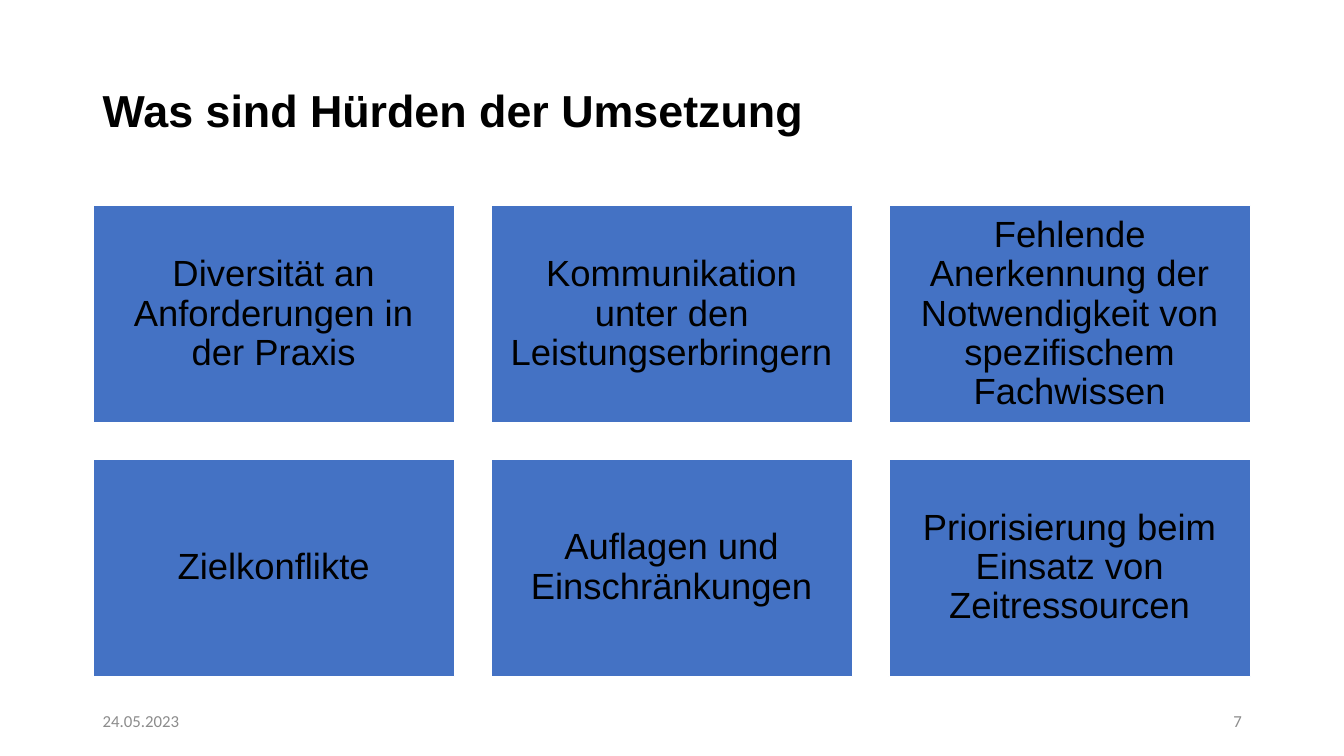
from pptx import Presentation
from pptx.dml.color import RGBColor
from pptx.enum.shapes import MSO_SHAPE
from pptx.enum.text import MSO_ANCHOR, PP_ALIGN
from pptx.util import Cm, Pt

COLORS = {"text": "000000", "tile": "4472C4", "border": "FFFFFF", "footer": "8C8C8C"}

HURDLES = [
    "Diversität an Anforderungen in der Praxis",
    "Kommunikation unter den Leistungserbringern",
    "Fehlende Anerkennung der Notwendigkeit von spezifischem Fachwissen",
    "Zielkonflikte",
    "Auflagen und Einschränkungen",
    "Priorisierung beim Einsatz von Zeitressourcen",
]
COLUMNS = 3
LEFT, TOP = 2.34, 5.18
TILE_WIDTH, TILE_HEIGHT, GAP = 9.12, 5.48, 0.91


class SlideBuilder:
    def __init__(self, page):
        self.page = page

    def color(self, name):
        return RGBColor.from_string(COLORS[name])

    def set_text(self, shape, text, size, font="Arial", color="text", bold=False,
                 align=PP_ALIGN.LEFT, spacing=1.0):
        frame = shape.text_frame
        frame.word_wrap = True
        frame.vertical_anchor = MSO_ANCHOR.MIDDLE
        para = frame.paragraphs[0]
        para.text = text
        para.alignment = align
        para.line_spacing = spacing
        para.font.name = font
        para.font.size = Pt(size)
        para.font.bold = bold
        para.font.color.rgb = self.color(color)

    def label(self, left, top, width, height, text, size, **style):
        box = self.page.shapes.add_textbox(Cm(left), Cm(top), Cm(width), Cm(height))
        self.set_text(box, text, size, **style)

    def tile(self, left, top, text):
        box = self.page.shapes.add_shape(
            MSO_SHAPE.RECTANGLE, Cm(left), Cm(top), Cm(TILE_WIDTH), Cm(TILE_HEIGHT))
        box.shadow.inherit = False
        box.fill.solid()
        box.fill.fore_color.rgb = self.color("tile")
        box.line.color.rgb = self.color("border")
        box.line.width = Pt(1)
        frame = box.text_frame
        frame.margin_left = frame.margin_right = Cm(0.28)
        frame.margin_top = frame.margin_bottom = Cm(0.28)
        self.set_text(box, text, 26, align=PP_ALIGN.CENTER, spacing=0.9)


def main():
    deck = Presentation()
    deck.slide_width, deck.slide_height = Cm(33.87), Cm(19.05)
    builder = SlideBuilder(deck.slides.add_slide(deck.slide_layouts[6]))

    builder.label(LEFT, 1.02, 29.21, 3.68, "Was sind Hürden der Umsetzung", 32,
                  bold=True, spacing=0.9)
    for index, hurdle in enumerate(HURDLES):
        row, column = divmod(index, COLUMNS)
        builder.tile(LEFT + column * (TILE_WIDTH + GAP),
                     TOP + row * (TILE_HEIGHT + GAP), hurdle)

    footer = {"font": "Calibri", "color": "footer"}
    builder.label(LEFT, 17.65, 7.62, 1.02, "24.05.2023", 12, **footer)
    builder.label(23.93, 17.65, 7.62, 1.02, "7", 12, align=PP_ALIGN.RIGHT, **footer)

    deck.save("out.pptx")


if __name__ == "__main__":
    main()
